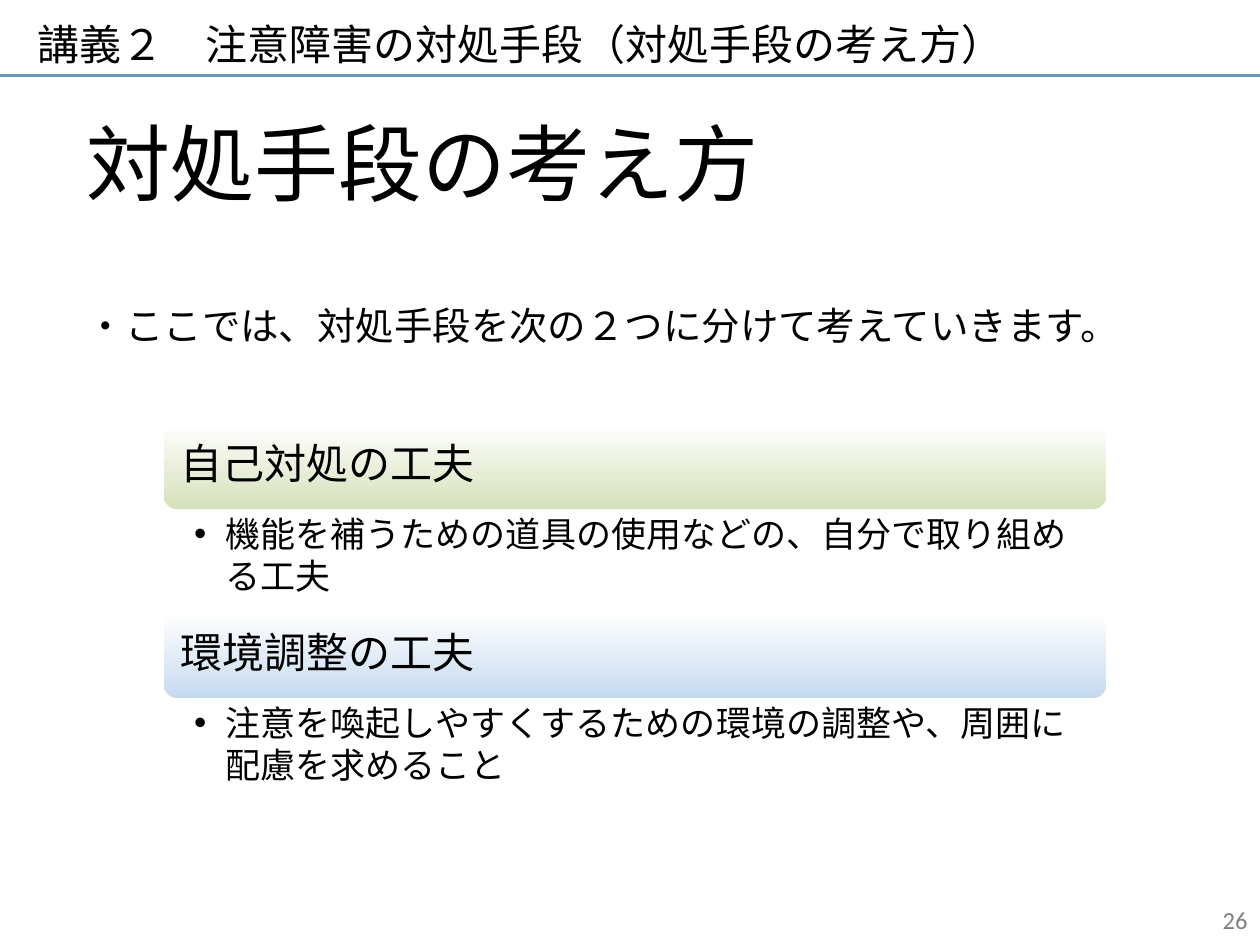
from lxml.etree import SubElement
from pptx import Presentation
from pptx.dml.color import RGBColor
from pptx.enum.shapes import MSO_CONNECTOR, MSO_SHAPE
from pptx.enum.text import MSO_ANCHOR, MSO_AUTO_SIZE, PP_ALIGN
from pptx.oxml.ns import qn
from pptx.util import Inches, Pt

WIDTH, HEIGHT = 10, 7.5
JAPANESE = "Noto Sans CJK JP"

# Grid of the two method groups
GROUP_LEFT, GROUP_TOP, GROUP_WIDTH = 1.3, 3.36, 7.48
GROUP_STEP, BAR_HEIGHT, DETAIL_HEIGHT = 1.5, 0.68, 0.8
METHODS = [
    ("自己対処の工夫", "機能を補うための道具の使用などの、自分で取り組める工夫", "D5E1B9"),
    ("環境調整の工夫", "注意を喚起しやすくするための環境の調整や、周囲に配慮を求めること", "C6DAEF"),
]


def color(value):
    return RGBColor.from_string(value)


def place(shape, left, top, width, height):
    shape.left, shape.top = Inches(left), Inches(top)
    shape.width, shape.height = Inches(width), Inches(height)


def set_frame(frame, anchor=MSO_ANCHOR.TOP, insets=(0.1, 0.05, 0.1, 0.05)):
    frame.word_wrap = True
    frame.auto_size = MSO_AUTO_SIZE.NONE
    frame.vertical_anchor = anchor
    frame.margin_left, frame.margin_top, frame.margin_right, frame.margin_bottom = map(Inches, insets)


def write(paragraph, text, size, font=JAPANESE, text_color="000000", align=PP_ALIGN.LEFT):
    paragraph.text = text
    paragraph.alignment = align
    paragraph.font.size = Pt(size)
    paragraph.font.name = font
    paragraph.font.color.rgb = color(text_color)
    # Japanese glyphs follow the East Asian typeface
    properties = paragraph._p.pPr.find(qn("a:defRPr"))
    SubElement(properties, qn("a:ea"), typeface=font)


def add_bullet(paragraph, indent):
    properties = paragraph._p.get_or_add_pPr()
    properties.set("marL", str(Inches(indent)))
    properties.set("indent", str(-Inches(indent)))
    SubElement(properties, qn("a:buFont"), typeface="Arial")
    SubElement(properties, qn("a:buChar"), char="•")


def add_text_box(slide, left, top, width, height, **frame_options):
    box = slide.shapes.add_textbox(*map(Inches, (left, top, width, height)))
    set_frame(box.text_frame, **frame_options)
    return box.text_frame


def add_header(slide):
    title = slide.shapes.title
    place(title, 0.2, 0.05, 8.89, 0.71)
    set_frame(title.text_frame, MSO_ANCHOR.MIDDLE)
    paragraph = title.text_frame.paragraphs[0]
    paragraph.line_spacing = 0.6
    write(paragraph, "講義２　注意障害の対処手段（対処手段の考え方）", 24)

    rule = slide.shapes.add_connector(
        MSO_CONNECTOR.STRAIGHT, 0, Inches(0.6), Inches(WIDTH), Inches(0.6))
    rule.line.color.rgb = color("6694BE")
    rule.line.width = Pt(1.5)
    SubElement(rule._element.spPr, qn("a:effectLst"))


def add_introduction(slide):
    frame = add_text_box(slide, 0.59, 0.84, 8.9, 2.4)
    write(frame.paragraphs[0], "対処手段の考え方", 48)
    lead = frame.add_paragraph()
    lead.space_before = Pt(51)
    write(lead, "・ここでは、対処手段を次の２つに分けて考えていきます。", 22)


def add_method(slide, top, heading, detail, bar_color):
    # Heading bar, fading from white at the top
    bar = slide.shapes.add_shape(
        MSO_SHAPE.ROUNDED_RECTANGLE,
        *map(Inches, (GROUP_LEFT, top, GROUP_WIDTH, BAR_HEIGHT)))
    bar.shadow.inherit = False
    bar.line.fill.background()
    bar.fill.gradient()
    bar.fill.gradient_angle = 270
    for stop, value in zip(bar.fill.gradient_stops, ("FFFFFF", bar_color)):
        stop.color.rgb = color(value)
    set_frame(bar.text_frame, MSO_ANCHOR.MIDDLE, (0.1, 0.1, 0.1, 0.1))
    paragraph = bar.text_frame.paragraphs[0]
    paragraph.line_spacing = 0.9
    write(paragraph, heading, 24)

    # Explanation below the bar
    frame = add_text_box(slide, GROUP_LEFT, top + BAR_HEIGHT, GROUP_WIDTH, DETAIL_HEIGHT,
                         insets=(0.24, 0.03, 0.16, 0.03))
    paragraph = frame.paragraphs[0]
    add_bullet(paragraph, 0.25)
    write(paragraph, detail, 20)


def add_page_number(slide, number):
    frame = add_text_box(slide, 7.67, 7.1, 2.33, 0.4, anchor=MSO_ANCHOR.MIDDLE)
    write(frame.paragraphs[0], number, 14, "Calibri", "7F7F7F", PP_ALIGN.RIGHT)


def main():
    presentation = Presentation()
    presentation.slide_width, presentation.slide_height = Inches(WIDTH), Inches(HEIGHT)
    slide = presentation.slides.add_slide(presentation.slide_layouts[5])

    add_header(slide)
    add_introduction(slide)
    for row, method in enumerate(METHODS):
        add_method(slide, GROUP_TOP + row * GROUP_STEP, *method)
    add_page_number(slide, "26")

    presentation.save("out.pptx")


if __name__ == "__main__":
    main()
